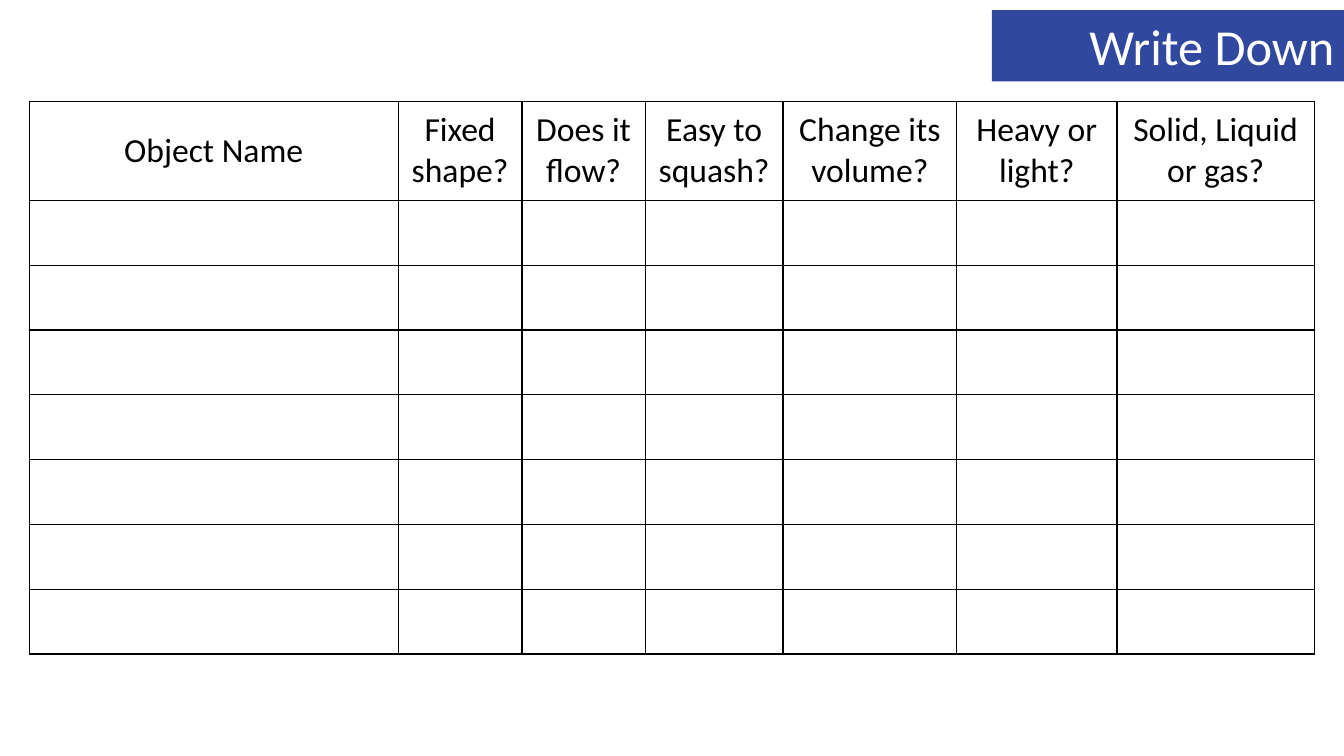
from lxml import etree
from pptx import Presentation
from pptx.dml.color import RGBColor
from pptx.enum import text
from pptx.oxml.ns import qn
from pptx.util import Pt

HEADERS = ["Object Name", "Fixed shape?", "Does it flow?", "Easy to squash?",
           "Change its volume?", "Heavy or light?", "Solid, Liquid or gas?"]
COL_WIDTHS = [263.5, 88.5, 88, 98.5, 124, 114.5, 141]
HEADER_HEIGHT, ROW_HEIGHT, BLANK_ROWS = 70.6, 46.3, 7


def add_run(p, words, size, color):
    r = p.add_run()
    r.text = words
    r.font.name = "Calibri"
    r.font.size = Pt(size)
    r.font.color.rgb = RGBColor.from_string(color)


def set_borders(cell, color, width):
    """Draw all four sides of a cell; call before filling it, as lines come first."""
    tcPr = cell._tc.get_or_add_tcPr()
    for side in ("a:lnL", "a:lnR", "a:lnT", "a:lnB"):
        ln = etree.SubElement(tcPr, qn(side), w=str(Pt(width)))
        fill = etree.SubElement(ln, qn("a:solidFill"))
        etree.SubElement(fill, qn("a:srgbClr"), val=color)


prs = Presentation()
prs.slide_width, prs.slide_height = Pt(960), Pt(540)
s = prs.slides.add_slide(prs.slide_layouts[5])

# Title banner
title = s.shapes.title
title.left, title.top, title.width, title.height = Pt(708.5), Pt(7.2), Pt(252), Pt(51)
title.fill.solid()
title.fill.fore_color.rgb = RGBColor.from_string("31489F")
tf = title.text_frame
tf.word_wrap = True
tf.auto_size = text.MSO_AUTO_SIZE.NONE
tf.vertical_anchor = text.MSO_ANCHOR.TOP
p = tf.paragraphs[0]
p.alignment = text.PP_ALIGN.RIGHT
add_run(p, "Write Down", 36, "FFFFFF")

# Recording table
table = s.shapes.add_table(
    BLANK_ROWS + 1, len(HEADERS), Pt(20.9), Pt(72.5), Pt(sum(COL_WIDTHS)),
    Pt(HEADER_HEIGHT + BLANK_ROWS * ROW_HEIGHT)).table
table.first_row = table.horz_banding = False
for col, width in zip(table.columns, COL_WIDTHS):
    col.width = Pt(width)
for i, row in enumerate(table.rows):
    row.height = Pt(ROW_HEIGHT if i else HEADER_HEIGHT)
for cell in table.iter_cells():
    set_borders(cell, "000000", 1)
    cell.fill.background()
    cell.vertical_anchor = text.MSO_ANCHOR.MIDDLE
for cell, header in zip(table.rows[0].cells, HEADERS):
    p = cell.text_frame.paragraphs[0]
    p.alignment = text.PP_ALIGN.CENTER
    add_run(p, header, 24, "000000")

prs.save("out.pptx")
